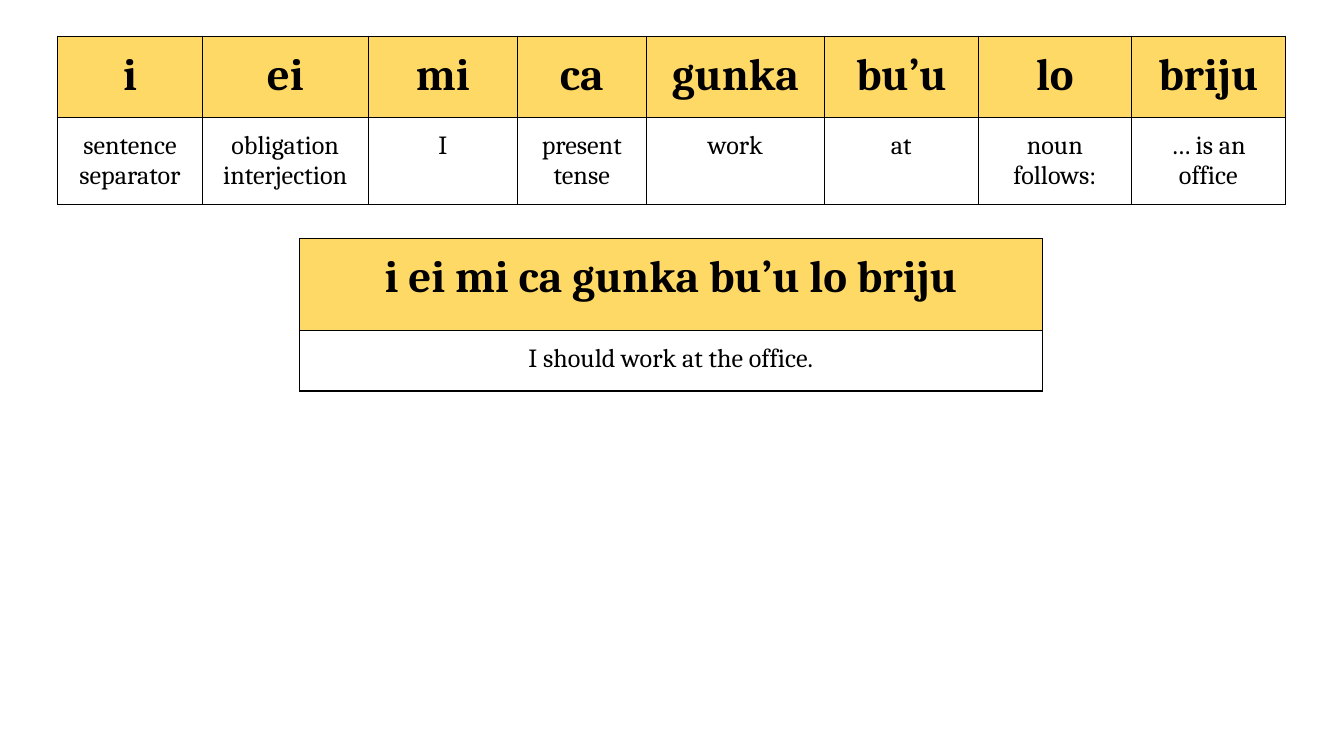
from dataclasses import dataclass

from lxml.etree import SubElement as Sub
from pptx import Presentation
from pptx.dml.color import RGBColor as Color
from pptx.enum.text import PP_ALIGN as Align
from pptx.oxml.ns import qn
from pptx.util import Emu, Pt


@dataclass(frozen=True)
class Theme:
    font: str = "Cambria"
    ink: str = "000000"
    head: str = "FFD966"
    big: int = 24
    small: int = 14
    line: float = 0.75


THEME = Theme()
SCALE = 4572
PAD = 20
WORDS = [
    ("i", "sentence separator"),
    ("ei", "obligation interjection"),
    ("mi", "I"),
    ("ca", "present tense"),
    ("gunka", "work"),
    ("bu’u", "at"),
    ("lo", "noun follows:"),
    ("briju", "… is an office"),
]


def px(n):
    """Turn px, at 200 to the inch, into EMU."""
    return Emu(n * SCALE)


def edge(cell):
    """Draw a thin line on all four sides of a cell."""
    props = cell._tc.get_or_add_tcPr()
    for side in ("lnL", "lnR", "lnT", "lnB"):
        line = Sub(props, qn(f"a:{side}"), w=str(Pt(THEME.line)))
        fill = Sub(line, qn("a:solidFill"))
        Sub(fill, qn("a:srgbClr"), val=THEME.ink)


def style(cell, head):
    edge(cell)
    if head:
        cell.fill.solid()
        cell.fill.fore_color.rgb = Color.from_string(THEME.head)
    else:
        cell.fill.background()
    cell.margin_left = cell.margin_right = px(PAD)
    cell.margin_top = cell.margin_bottom = px(PAD)
    for par in cell.text_frame.paragraphs:
        par.alignment = Align.CENTER
        for run in par.runs:
            font = run.font
            font.name = THEME.font
            font.size = Pt(THEME.big if head else THEME.small)
            font.bold = head
            font.color.rgb = Color.from_string(THEME.ink)


def add_grid(slide, left, top, cols, rows, text, merge=False):
    """Add a table with a bold head row; merge joins each row into one cell."""
    frame = slide.shapes.add_table(
        len(rows), len(cols), px(left), px(top), px(sum(cols)), px(sum(rows)))
    table = frame.table
    table.first_row = table.horz_banding = False
    for col, wide in zip(table.columns, cols):
        col.width = px(wide)
    for r, high in enumerate(rows):
        table.rows[r].height = px(high)
        if merge:
            table.cell(r, 0).merge(table.cell(r, len(cols) - 1))
        for c, word in enumerate(text[r]):
            table.cell(r, c).text_frame.text = word
        for c in range(len(cols)):
            style(table.cell(r, c), head=r == 0)


def main():
    deck = Presentation()
    deck.slide_width, deck.slide_height = px(2000), px(1125)
    slide = deck.slides.add_slide(deck.slide_layouts[6])
    add_grid(slide, 86, 54, [215, 247, 222, 192, 265, 229, 228, 229],
             [121, 90], list(zip(*WORDS)))
    phrase = " ".join(word for word, _ in WORDS)
    add_grid(slide, 446, 355, [228, 228, 228, 421], [137, 90],
             [[phrase], ["I should work at the office."]], merge=True)
    deck.save("out.pptx")


if __name__ == "__main__":
    main()
